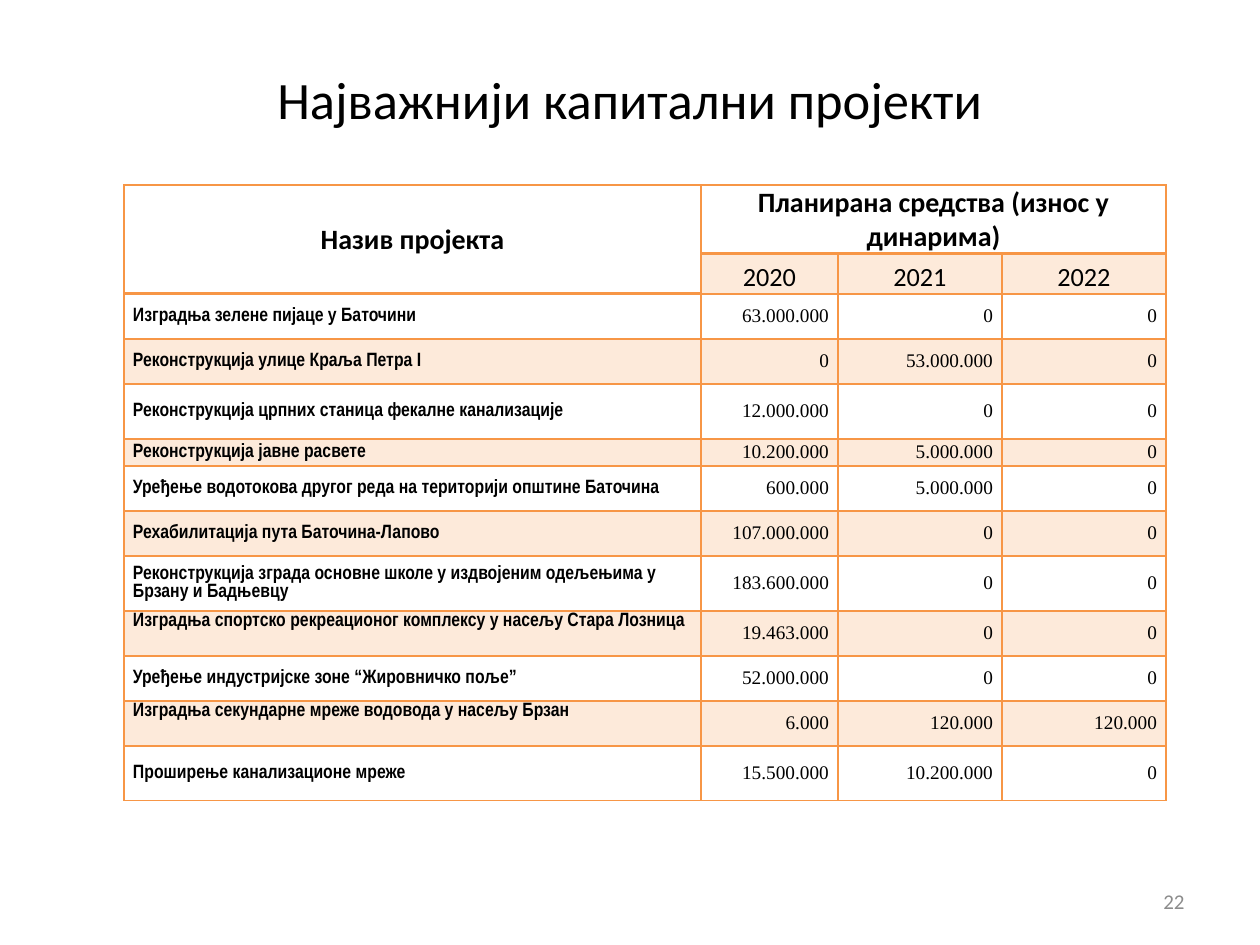
from lxml.etree import SubElement
from pptx import Presentation
from pptx.dml.color import RGBColor
from pptx.enum.text import MSO_ANCHOR as Anchor, PP_ALIGN as Align
from pptx.oxml.ns import qn
from pptx.util import Emu, Pt

TITLE = "Најважнији капитални пројекти"
NAME_HEADING = "Назив пројекта"
FUNDS_HEADING = "Планирана средства (износ у динарима)"
YEARS = ("2020", "2021", "2022")
PAGE_NUMBER = "22"

# name, planned funds by year, row height in px
PROJECTS = [
    ("Изградња зелене пијаце у Баточини", ("63.000.000", "0", "0"), 45),
    ("Реконструкција улице Краља Петра I", ("0", "53.000.000", "0"), 45),
    ("Реконструкција црпних станица фекалне канализације", ("12.000.000", "0", "0"), 55),
    ("Реконструкција јавне расвете", ("10.200.000", "5.000.000", "0"), 27),
    ("Уређење водотокова другог реда на територији општине Баточина",
     ("600.000", "5.000.000", "0"), 45),
    ("Рехабилитација пута Баточина-Лапово", ("107.000.000", "0", "0"), 45),
    ("Реконструкција зграда основне школе у издвојеним одељењима у Брзану и Бадњевцу",
     ("183.600.000", "0", "0"), 55),
    ("Изградња спортско рекреационог комплексу у насељу Стара Лозница",
     ("19.463.000", "0", "0"), 45),
    ("Уређење индустријске зоне “Жировничко поље”", ("52.000.000", "0", "0"), 45),
    ("Изградња секундарне мреже водовода у насељу Брзан",
     ("6.000", "120.000", "120.000"), 45),
    ("Проширење канализационе мреже", ("15.500.000", "10.200.000", "0"), 55),
]
TOP_ALIGNED = {7, 9}
COLUMN_WIDTHS = (577, 137, 164, 164)
HEADER_HEIGHTS = (69, 40)
TABLE_LEFT, TABLE_TOP = 124, 185
ORANGE, PEACH, WHITE, BLACK, GRAY = "F79646", "FDEADA", "FFFFFF", "000000", "8C8C8C"


def px(value):
    return Emu(round(value * 914400 / 126))


def color(value):
    return RGBColor.from_string(value)


def write(frame, text, size, font="Calibri", bold=False, align=Align.CENTER, ink=BLACK):
    frame.text = text
    para = frame.paragraphs[0]
    para.alignment = align
    for span in para.runs:
        span.font.name = font
        span.font.size = Pt(size)
        span.font.bold = bold
        span.font.color.rgb = color(ink)


def style_cell(cell, fill, anchor=Anchor.MIDDLE, bottom_width=1):
    """Set the fill, insets and four borders of a table cell."""
    cell.margin_left = cell.margin_right = px(9)
    cell.margin_top = cell.margin_bottom = 0
    cell.vertical_anchor = anchor
    properties = cell._tc.get_or_add_tcPr()
    for side, width in (("L", 1), ("R", 1), ("T", 1), ("B", bottom_width)):
        line = SubElement(properties, qn(f"a:ln{side}"), w=str(Pt(width)))
        solid = SubElement(line, qn("a:solidFill"))
        SubElement(solid, qn("a:srgbClr"), val=ORANGE)
    cell.fill.solid()
    cell.fill.fore_color.rgb = color(fill)


def add_projects_table(page):
    heights = HEADER_HEIGHTS + tuple(height for _, _, height in PROJECTS)
    frame = page.shapes.add_table(
        len(heights), len(COLUMN_WIDTHS), px(TABLE_LEFT), px(TABLE_TOP),
        px(sum(COLUMN_WIDTHS)), px(sum(heights)))
    table = frame.table
    table.first_row = table.horz_banding = False
    for column, width in zip(table.columns, COLUMN_WIDTHS):
        column.width = px(width)
    for row, height in zip(table.rows, heights):
        row.height = px(height)

    for col in range(len(COLUMN_WIDTHS)):
        first_col = col == 0
        style_cell(table.cell(0, col), WHITE,
                   Anchor.MIDDLE if first_col else Anchor.BOTTOM, bottom_width=2)
        style_cell(table.cell(1, col), WHITE if first_col else PEACH,
                   Anchor.BOTTOM, bottom_width=2 if first_col else 1)
    table.cell(0, 0).merge(table.cell(1, 0))
    table.cell(0, 1).merge(table.cell(0, 3))
    write(table.cell(0, 0).text_frame, NAME_HEADING, 16, bold=True)
    write(table.cell(0, 1).text_frame, FUNDS_HEADING, 16, bold=True)
    for col, year in enumerate(YEARS, 1):
        write(table.cell(1, col).text_frame, year, 15)

    for index, (name, amounts, _) in enumerate(PROJECTS):
        row = index + len(HEADER_HEIGHTS)
        fill = PEACH if index % 2 else WHITE
        name_cell = table.cell(row, 0)
        style_cell(name_cell, fill)
        if index in TOP_ALIGNED:
            name_cell.vertical_anchor = Anchor.TOP
            name_cell.margin_top = px(2)
        write(name_cell.text_frame, name, 11, "Arial Narrow", True, Align.LEFT)
        for col, amount in enumerate(amounts, 1):
            cell = table.cell(row, col)
            style_cell(cell, fill)
            write(cell.text_frame, amount, 11, "Times New Roman", align=Align.RIGHT)


def main():
    deck = Presentation()
    deck.slide_width, deck.slide_height = px(1260), px(945)
    page = deck.slides.add_slide(deck.slide_layouts[5])

    title = page.shapes.title
    title.left, title.top, title.width, title.height = px(63), px(38), px(1134), px(121)
    title.text_frame.vertical_anchor = Anchor.MIDDLE
    write(title.text_frame, TITLE, 30)

    add_projects_table(page)

    number = page.shapes.add_textbox(px(903), px(876), px(294), px(50)).text_frame
    number.word_wrap = True
    number.vertical_anchor = Anchor.MIDDLE
    write(number, PAGE_NUMBER, 12, align=Align.RIGHT, ink=GRAY)

    deck.save("out.pptx")


if __name__ == "__main__":
    main()
